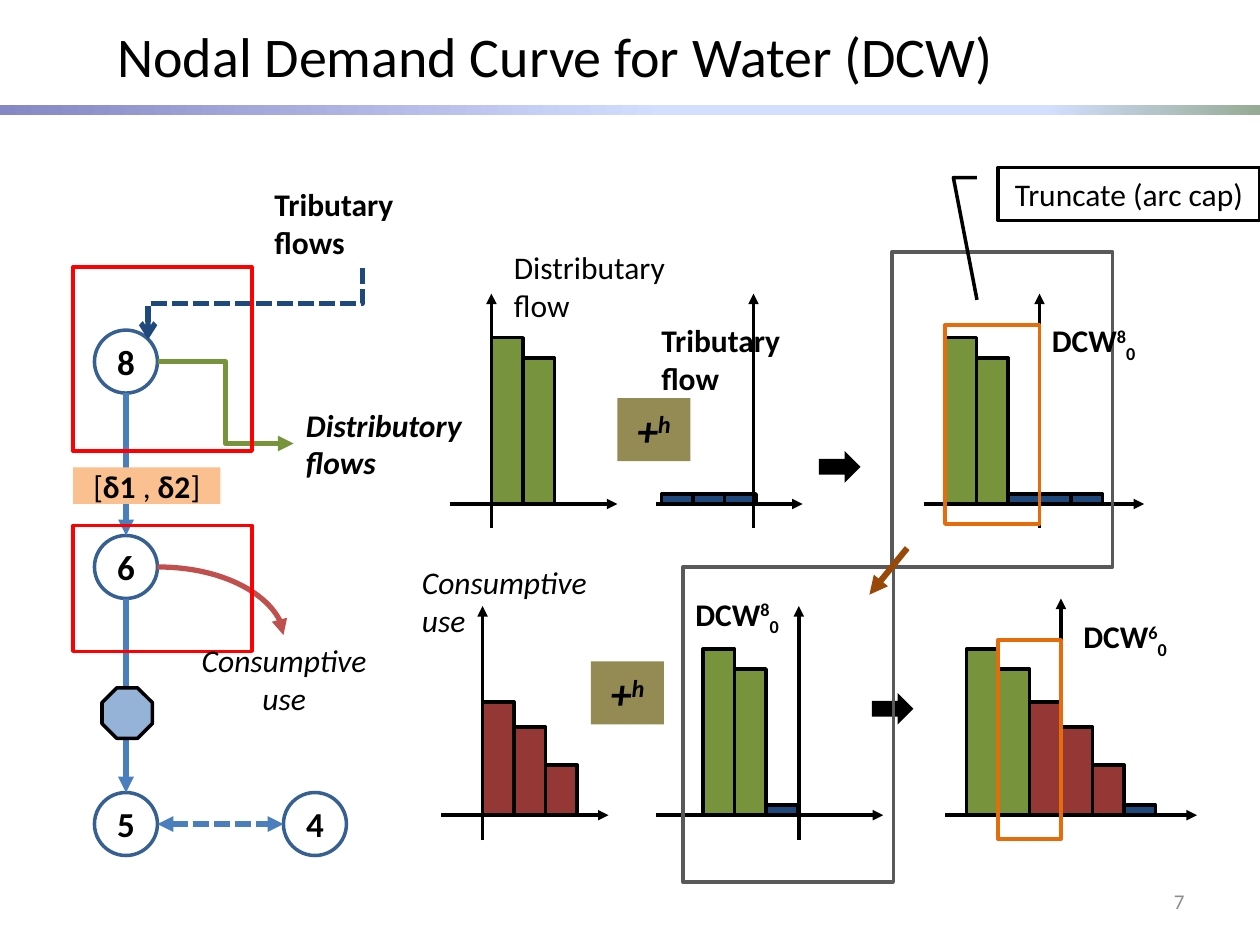
from dataclasses import dataclass
from typing import Optional

from lxml.etree import SubElement
from pptx import Presentation
from pptx.dml.color import RGBColor
from pptx.enum.dml import MSO_LINE_DASH_STYLE as Dash
from pptx.enum.shapes import MSO_CONNECTOR as Link, MSO_SHAPE as Shape
from pptx.enum.text import MSO_ANCHOR as Anchor, MSO_AUTO_SIZE as AutoSize, PP_ALIGN as Align
from pptx.oxml.ns import qn
from pptx.util import Cm, Pt

COLORS = {
    "black": "000000", "number": "8C8C8C", "node": "376092", "main": "4B7EBC",
    "tributary": "1F497D", "distributary": "77933C", "consumptive": "953735",
    "use": "C0504D", "red": "FF0000", "gray": "595959", "orange": "E46C0A",
    "brown": "984807", "plus": "948A54", "peach": "FAC090", "octagon": "95B3D7",
}
BAR_STOPS = [(0, "8488C4"), (53, "D4DEFF"), (83, "D4DEFF"), (100, "96AB94")]
FONT = "Calibri"
BAR_WIDTH = 0.25
NODE_SIZE = 0.5


@dataclass
class Span:
    text: str
    baseline: int = 0  # percent: above zero is superscript
    bold: Optional[bool] = None


@dataclass
class Label:
    spans: list
    left: float
    top: float
    width: float
    height: float = 0.71
    bold: bool = False
    italic: bool = False
    align: Align = Align.LEFT


@dataclass
class Histogram:
    axis_x: float
    top: float
    bottom: float
    left: float
    right: float
    base: float
    first_bar: float
    bars: list  # (color name, height)


def inch(value: float) -> Cm:
    """The layout grid is in inches; lengths are handed over in centimetres."""
    return Cm(value * 2.54)


def rgb(name: str) -> RGBColor:
    return RGBColor.from_string(COLORS[name])


def write(box, spans, size, color="black", bold=False, italic=False,
          align=Align.CENTER, anchor=Anchor.MIDDLE):
    frame = box.text_frame
    frame.word_wrap = True
    frame.vertical_anchor = anchor
    para = frame.paragraphs[0]
    para.alignment = align
    font = para.font
    font.name, font.size, font.bold, font.italic = FONT, Pt(size), bold, italic
    font.color.rgb = rgb(color)
    for span in spans:
        run = para.add_run()
        run.text = span.text
        if span.bold is not None:
            run.font.bold = span.bold
        if span.baseline:
            run.font._element.set("baseline", str(span.baseline * 1000))


def add_box(page, kind, left, top, width, height, fill=None, line=None):
    box = page.shapes.add_shape(kind, inch(left), inch(top), inch(width), inch(height))
    box.shadow.inherit = False
    if fill:
        box.fill.solid()
        box.fill.fore_color.rgb = rgb(fill)
    else:
        box.fill.background()
    if line:
        box.line.color.rgb = rgb(line)
        box.line.width = Pt(2)
    else:
        box.line.fill.background()
    return box


def add_arrow(page, start, end, color="black", width=2.0, kind=Link.STRAIGHT,
              tail="triangle", head=None, dashed=False):
    arrow = page.shapes.add_connector(kind, *map(inch, (*start, *end)))
    arrow.line.color.rgb = rgb(color)
    arrow.line.width = Pt(width)
    if dashed:
        arrow.line.dash_style = Dash.SQUARE_DOT
    line = arrow.line._get_or_add_ln()
    if head:
        SubElement(line, qn("a:headEnd"), type=head)
    SubElement(line, qn("a:tailEnd"), type=tail)
    SubElement(arrow._element.spPr, qn("a:effectLst"))
    return arrow


def add_label(page, label: Label):
    box = page.shapes.add_textbox(*map(inch, (label.left, label.top, label.width, label.height)))
    write(box, label.spans, 18, bold=label.bold, italic=label.italic,
          align=label.align, anchor=Anchor.TOP)
    box.text_frame.auto_size = AutoSize.SHAPE_TO_FIT_TEXT


def add_node(page, number, left, top):
    node = add_box(page, Shape.OVAL, left, top, NODE_SIZE, NODE_SIZE, line="node")
    write(node, [Span(number)], 20, bold=True)


def add_histogram(page, chart: Histogram):
    for index, (color, height) in enumerate(chart.bars):
        add_box(page, Shape.RECTANGLE, chart.first_bar + index * BAR_WIDTH,
                chart.base - height, BAR_WIDTH, height, color, "black")
    add_arrow(page, (chart.axis_x, chart.bottom), (chart.axis_x, chart.top))
    add_arrow(page, (chart.left, chart.base), (chart.right, chart.base))


def add_gradient_bar(page):
    bar = add_box(page, Shape.RECTANGLE, 0, 0.83, 10, 0.08)
    bar.fill.gradient()
    bar.fill.gradient_angle = 0
    stops = bar._element.spPr.find(qn("a:gradFill")).find(qn("a:gsLst"))
    for stop in list(stops):
        stops.remove(stop)
    for position, color in BAR_STOPS:
        stop = SubElement(stops, qn("a:gs"), pos=str(position * 1000))
        SubElement(stop, qn("a:srgbClr"), val=color)


def dcw(node: str, left: float, top: float) -> Label:
    return Label([Span("DCW"), Span(node, 30), Span("0", -25)], left, top, 1, 0.4, bold=True)


GREEN = [("distributary", 1.32), ("distributary", 1.16)]
BLUE = [("tributary", 0.08)]
RED = [("consumptive", height) for height in (0.9, 0.7, 0.4)]
HISTOGRAMS = [
    Histogram(3.9, 2.33, 4.19, 3.57, 4.9, 4, 3.9, GREEN),
    Histogram(5.98, 2.33, 4.19, 5.21, 6.37, 4, 5.25, BLUE * 3),
    Histogram(8.25, 2.33, 4.19, 7.33, 9.08, 4, 7.5, GREEN + BLUE * 3),
    Histogram(3.83, 4.81, 6.67, 3.5, 4.83, 6.47, 3.83, RED),
    Histogram(6.34, 4.81, 6.67, 5.21, 7.01, 6.47, 5.58, GREEN + BLUE),
    Histogram(8.42, 4.75, 6.61, 7.5, 9.5, 6.47, 7.67, GREEN + RED + BLUE),
]
LABELS = [
    Label([Span("Tributary flows")], 2.08, 1.42, 1.58, bold=True),
    Label([Span("Distributory flows")], 2.33, 3.17, 1.75, bold=True, italic=True),
    Label([Span("Consumptive use")], 1.42, 5.04, 1.67, italic=True, align=Align.CENTER),
    Label([Span("Distributary flow")], 3.98, 1.92, 1.42),
    Label([Span("Tributary flow")], 5.15, 2.5, 1.6, bold=True),
    Label([Span("Consumptive use")], 3.25, 4.42, 1.67, italic=True),
    dcw("8", 8.25, 2.5), dcw("8", 5.42, 4.67), dcw("6", 8.5, 4.85),
]
NODES = [("8", 0.75, 2.62), ("6", 0.75, 4.25), ("5", 0.75, 6.29), ("4", 2.25, 6.29)]
FRAMES = [
    ("red", 0.58, 2.12, 1.42, 1.46), ("red", 0.58, 4.17, 1.42, 1),
    ("gray", 5.42, 4.5, 1.67, 2.5), ("gray", 7.08, 2, 1.75, 2.5),
    ("orange", 7.92, 5.08, 0.5, 1.58), ("orange", 7.5, 2.58, 0.75, 1.58),
]


def main():
    deck = Presentation()
    deck.slide_width, deck.slide_height = inch(10), inch(7.5)
    page = deck.slides.add_slide(deck.slide_layouts[5])

    # Title and divider
    title = page.shapes.title
    title.left, title.top, title.width, title.height = map(inch, (0.83, 0, 8.92, 0.87))
    write(title, [Span("Nodal Demand Curve for Water (DCW)")], 32, align=Align.LEFT)
    add_gradient_bar(page)

    # River network
    for node in NODES:
        add_node(page, *node)
    add_arrow(page, (1, 3.12), (1, 4.25), "main", 3)
    add_arrow(page, (1, 4.75), (1, 6.29), "main", 3)
    add_arrow(page, (1.25, 6.54), (2.25, 6.54), "main", 3, head="triangle", dashed=True)
    inflow = add_arrow(page, (1.74, 1.56), (2.31, 3.26), "tributary", 3,
                       Link.ELBOW, tail="arrow", dashed=True)
    inflow._element.spPr.find(qn("a:xfrm")).set("rot", str(90 * 60000))
    add_arrow(page, (1.25, 2.87), (2.33, 3.52), "distributary", 3, Link.ELBOW)
    use = add_arrow(page, (1.25, 4.5), (2.25, 5.04), "use", 3, Link.CURVE)
    use._element.spPr.find(qn("a:prstGeom")).set("prst", "curvedConnector2")
    add_box(page, Shape.OCTAGON, 0.81, 5.46, 0.4, 0.4, "octagon", "black")

    # Demand curves, with the operators between them
    for chart in HISTOGRAMS:
        add_histogram(page, chart)
    for left, top in [(4.9, 3.16), (4.69, 5.25)]:
        plus = add_box(page, Shape.RECTANGLE, left, top, 0.58, 0.5, "plus")
        write(plus, [Span("+"), Span("h", 30)], 24, bold=True, italic=True)
    for left, top in [(6.5, 3.58), (6.92, 5.5)]:
        add_box(page, Shape.RIGHT_ARROW, left, top, 0.33, 0.25, "black")

    # Frames, callout and labels
    for color, *bounds in FRAMES:
        add_box(page, Shape.RECTANGLE, *bounds, line=color)
    callout = add_box(page, Shape.LINE_CALLOUT_2, 7.92, 1.33, 2.08, 0.42, line="black")
    for index, value in enumerate((0.19, -0.08, 0.19, -0.17, 2.5, -0.08)):
        callout.adjustments[index] = value
    write(callout, [Span("Truncate (arc cap)")], 18)
    for label in LABELS:
        add_label(page, label)
    delta = add_box(page, Shape.RECTANGLE, 0.58, 3.71, 1.17, 0.29, "peach")
    write(delta, [Span("["), Span("δ1 ", bold=True), Span(","),
                  Span(" δ2", bold=True), Span("]")], 18)
    add_arrow(page, (7.2, 4.35), (6.9, 4.72), "brown", 3.5)

    # Page number
    number = page.shapes.add_textbox(*map(inch, (7.17, 6.95, 2.33, 0.4)))
    write(number, [Span("7")], 12, "number", align=Align.RIGHT)
    deck.save("out.pptx")


if __name__ == "__main__":
    main()
